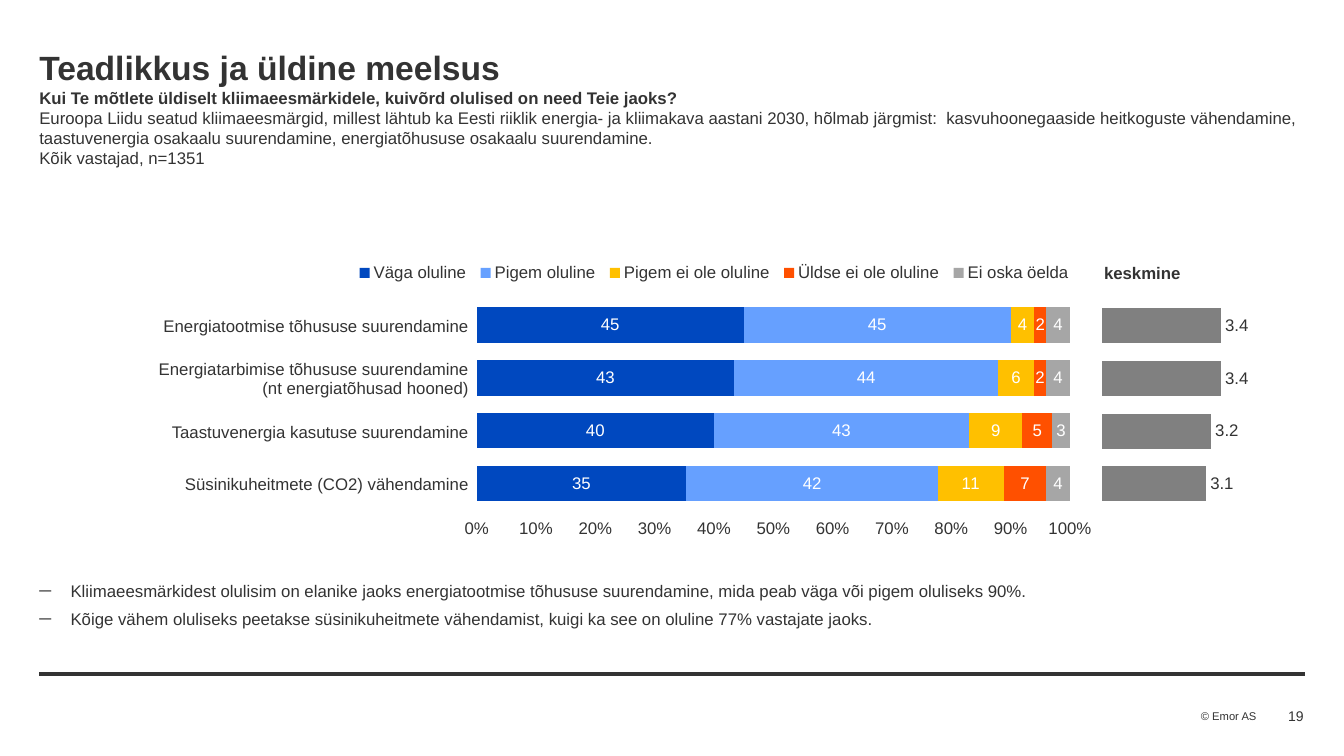
import pptx
import pptx.chart.data
import pptx.dml.color
import pptx.enum.chart
import pptx.enum.shapes
import pptx.enum.text
import pptx.oxml
import pptx.oxml.ns
import pptx.util
from dataclasses import dataclass
from lxml import etree

Inches, Pt = pptx.util.Inches, pptx.util.Pt
RGB = pptx.dml.color.RGBColor.from_string
ALIGN = pptx.enum.text.PP_ALIGN
ANCHOR = pptx.enum.text.MSO_ANCHOR
CHART = pptx.enum.chart.XL_CHART_TYPE
LABEL_AT = pptx.enum.chart.XL_LABEL_POSITION
qn = pptx.oxml.ns.qn


@dataclass(frozen=True)
class Theme:
    font: str = "Arial"
    ink: str = "333333"
    white: str = "FFFFFF"
    mean: str = "808080"
    answers: tuple = ("0048BF", "66A0FF", "FFC000", "FF5000", "A6A6A6")
    title: int = 24
    body: int = 12
    number: int = 10
    copyright: int = 8


THEME = Theme()
MARGIN, CONTENT_WIDTH = 0.39, 12.54

GOALS = [
    "Energiatootmise tõhususe suurendamine",
    "Energiatarbimise tõhususe suurendamine\v(nt energiatõhusad hooned)",
    "Taastuvenergia kasutuse suurendamine",
    "Süsinikuheitmete (CO2) vähendamine",
]
ANSWERS = {
    "Väga oluline": (45, 43, 40, 35),
    "Pigem oluline": (45, 44, 43, 42),
    "Pigem ei ole oluline": (4, 6, 9, 11),
    "Üldse ei ole oluline": (2, 2, 5, 7),
    "Ei oska öelda": (4, 4, 3, 4),
}
MEANS = {"Series 1": (3.4, 3.4, 3.2, 3.1)}
HEADING = [
    ("Teadlikkus ja üldine meelsus", THEME.title, True),
    ("Kui Te mõtlete üldiselt kliimaeesmärkidele, kuivõrd olulised on need Teie jaoks?", THEME.body, True),
    ("Euroopa Liidu seatud kliimaeesmärgid, millest lähtub ka Eesti riiklik energia- ja kliimakava "
     "aastani 2030, hõlmab järgmist:  kasvuhoonegaaside heitkoguste vähendamine, taastuvenergia "
     "osakaalu suurendamine, energiatõhususe osakaalu suurendamine.", THEME.body, False),
    ("Kõik vastajad, n=1351", THEME.body, False),
]
FINDINGS = [
    "Kliimaeesmärkidest olulisim on elanike jaoks energiatootmise tõhususe suurendamine, "
    "mida peab väga või pigem oluliseks 90%.",
    "Kõige vähem oluliseks peetakse süsinikuheitmete vähendamist, "
    "kuigi ka see on oluline 77% vastajate jaoks.",
]


def apply(target, **values):
    for name, value in values.items():
        setattr(target, name, value)


def set_font(font, size, color=THEME.ink, bold=False):
    apply(font, name=THEME.font, size=Pt(size), bold=bold)
    font.color.rgb = RGB(color)


def write(paragraph, text, size, bold=False, align=ALIGN.LEFT):
    paragraph.text = text
    paragraph.alignment = align
    for run in paragraph.runs:
        set_font(run.font, size, bold=bold)


def add_text_frame(slide, box, wrap=True, anchor=ANCHOR.TOP):
    frame = slide.shapes.add_textbox(*map(Inches, box)).text_frame
    apply(frame, word_wrap=wrap, vertical_anchor=anchor,
          margin_left=0, margin_top=0, margin_right=0, margin_bottom=0)
    return frame


def add_heading(slide):
    paragraph = add_text_frame(slide, (MARGIN, 0.47, CONTENT_WIDTH, 0.44)).paragraphs[0]
    for index, (text, size, bold) in enumerate(HEADING):
        if index:
            paragraph.add_line_break()
        run = paragraph.add_run()
        run.text = text
        set_font(run.font, size, bold=bold)


def add_findings(slide):
    frame = add_text_frame(slide, (MARGIN, 5.76, CONTENT_WIDTH, 0.96))
    for index, finding in enumerate(FINDINGS):
        paragraph = frame.add_paragraph() if index else frame.paragraphs[0]
        properties = paragraph._p.get_or_add_pPr()
        properties.set("marL", str(Inches(0.31)))
        properties.set("indent", str(-Inches(0.31)))
        etree.SubElement(properties, qn("a:buFont")).set("typeface", THEME.font)
        etree.SubElement(properties, qn("a:buChar")).set("char", "─")
        if index:
            paragraph.space_before = Pt(6)
        write(paragraph, finding, THEME.body)


def add_goal_table(slide):
    widths, row_height = (4.26, 6.25, 2), 0.524
    table = slide.shapes.add_table(
        len(GOALS) + 1, len(widths), Inches(0.4), Inches(2.45),
        Inches(sum(widths)), Inches(row_height * (len(GOALS) + 1))).table
    apply(table, first_row=False, horz_banding=False)
    for column, width in zip(table.columns, widths):
        column.width = Inches(width)
    for cell in table.iter_cells():
        cell.fill.background()
        apply(cell, vertical_anchor=ANCHOR.MIDDLE, margin_left=Inches(0.01),
              margin_right=Inches(0.01), margin_top=Inches(0.01), margin_bottom=0)
    mean_header = table.cell(0, 2)
    mean_header.margin_left = Inches(0.04)
    write(mean_header.text_frame.paragraphs[0], "keskmine", THEME.body, bold=True)
    for row, goal in enumerate(GOALS, start=1):
        write(table.cell(row, 0).text_frame.paragraphs[0], goal, THEME.body, align=ALIGN.RIGHT)


def place(part, position, box, **target):
    """Fix a chart part at box, given as fractions of the chart frame."""
    for old in part.findall(qn("c:layout")):
        part.remove(old)
    layout = etree.Element(qn("c:layout"))
    manual = etree.SubElement(layout, qn("c:manualLayout"))
    settings = {**target, "xMode": "edge", "yMode": "edge", **dict(zip("xywh", box))}
    for tag, value in settings.items():
        etree.SubElement(manual, qn("c:" + tag)).set("val", str(value))
    part.insert(position, layout)


def add_bar_chart(slide, kind, box, plot_box, series, colors, label_color, label_format, label_at):
    data = pptx.chart.data.CategoryChartData()
    data.categories = [str(number) for number in range(1, len(GOALS) + 1)]
    for name, values in series.items():
        data.add_series(name, values)
    chart = slide.shapes.add_chart(kind, *map(Inches, box), data).chart
    apply(chart, has_title=False, has_legend=False)
    set_font(chart.font, THEME.body)
    place(chart._chartSpace.chart.plotArea, 0, plot_box, layoutTarget="inner")
    apply(chart.category_axis, visible=False, reverse_order=True)
    chart.value_axis.has_major_gridlines = False
    plot = chart.plots[0]
    apply(plot, gap_width=50, vary_by_categories=False)
    for bars, color in zip(plot.series, colors):
        bars.format.fill.solid()
        bars.format.fill.fore_color.rgb = RGB(color)
        apply(bars.data_labels, show_value=True, number_format=label_format,
              number_format_is_linked=False, position=label_at)
        set_font(bars.data_labels.font, THEME.body, label_color)
    return chart


def add_mean_chart(slide):
    chart = add_bar_chart(
        slide, CHART.BAR_CLUSTERED, (10.81, 2.86, 2.21, 2.35), (0.056, 0.047, 0.889, 0.891),
        MEANS, [THEME.mean], THEME.ink, "#,##0.0", LABEL_AT.OUTSIDE_END)
    apply(chart.value_axis, minimum_scale=1, maximum_scale=5, visible=False)


def add_answer_chart(slide):
    chart = add_bar_chart(
        slide, CHART.BAR_STACKED_100, (3.48, 2.49, 7.43, 3.1), (0.168, 0.152, 0.792, 0.678),
        ANSWERS, THEME.answers, THEME.white, "0", LABEL_AT.CENTER)
    chart.plots[0].overlap = 100
    axis = chart.value_axis
    apply(axis, minimum_scale=0, maximum_scale=1, major_unit=0.1,
          major_tick_mark=pptx.enum.chart.XL_TICK_MARK.NONE,
          tick_label_position=pptx.enum.chart.XL_TICK_LABEL_POSITION.HIGH)
    apply(axis.tick_labels, number_format="0%", number_format_is_linked=False)
    axis.format.line.fill.background()
    chart.has_legend = True
    apply(chart.legend, position=pptx.enum.chart.XL_LEGEND_POSITION.TOP, include_in_layout=False)
    set_font(chart.legend.font, THEME.body)
    place(chart.legend._element, 1, (0, 0.03, 0.97, 0.08))


def add_footer(slide):
    rule = slide.shapes.add_connector(
        pptx.enum.shapes.MSO_CONNECTOR.STRAIGHT,
        *map(Inches, (MARGIN, 6.69, MARGIN + CONTENT_WIDTH + 0.01, 6.69)))
    rule.line.color.rgb = RGB(THEME.ink)
    rule.line.width = Pt(3)
    etree.SubElement(rule._element.spPr, qn("a:effectLst"))
    owner = add_text_frame(slide, (11.91, 7.04, 0.56, 0.13), wrap=False)
    write(owner.paragraphs[0], "© Emor AS", THEME.copyright)
    page = add_text_frame(slide, (11.87, 6.99, 1.06, 0.22), anchor=ANCHOR.MIDDLE)
    write(page.paragraphs[0], "19", THEME.number, align=ALIGN.RIGHT)


def main():
    deck = pptx.Presentation()
    apply(deck, slide_width=Inches(13.33), slide_height=Inches(7.5))
    slide = deck.slides.add_slide(deck.slide_layouts[6])
    # Heading and question
    add_heading(slide)
    # Goals with answer shares and means
    add_goal_table(slide)
    add_mean_chart(slide)
    add_answer_chart(slide)
    # Findings and footer
    add_findings(slide)
    add_footer(slide)
    deck.save("out.pptx")


if __name__ == "__main__":
    main()
